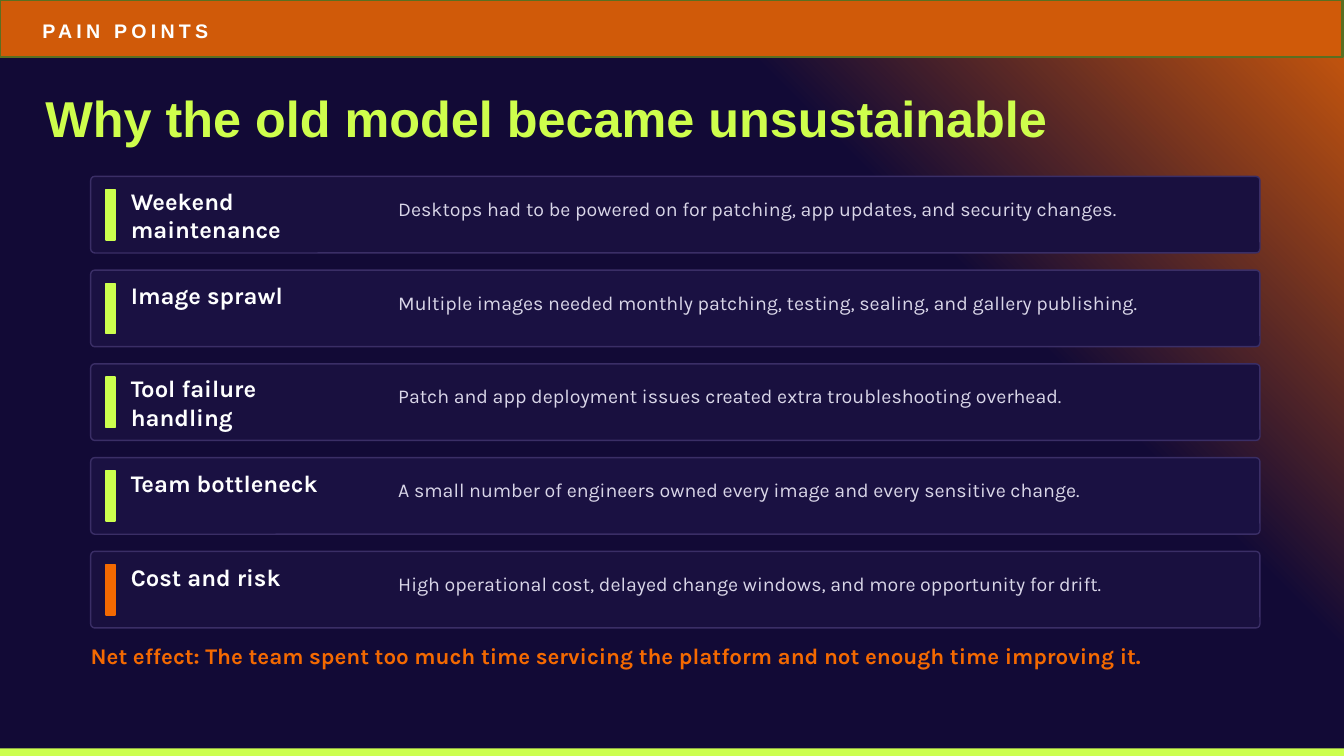
from lxml import etree
from pptx import Presentation
from pptx.dml.color import RGBColor
from pptx.enum import shapes, text
from pptx.oxml import ns
from pptx.util import Pt

COLORS = {
    "glow": "D15A0A", "night": "120A36", "band": "D05A09", "band_line": "5A6F21",
    "lime": "CCFF4E", "title": "CEFE4C", "orange": "F46901", "white": "FEFFFF",
    "body": "D9D6E8", "card": "19103F", "card_alt": "1A1142", "card_line": "3A2E66",
}
SLIDE_WIDTH, SLIDE_HEIGHT = 960, 540
CARD_LEFT, CARD_TOP, CARD_WIDTH, CARD_HEIGHT = 64.8, 126, 835.2, 54.7
CARD_PITCH = 66.96
ONE_LINE_OFFSET, TWO_LINE_OFFSET = 7.9, 17.3

# Label, label offset within the card, explanation, marker colour
PAIN_POINTS = [
    ("Weekend maintenance", TWO_LINE_OFFSET,
     "Desktops had to be powered on for patching, app updates, and security changes.", "lime"),
    ("Image sprawl", ONE_LINE_OFFSET,
     "Multiple images needed monthly patching, testing, sealing, and gallery publishing.", "lime"),
    ("Tool failure handling", TWO_LINE_OFFSET,
     "Patch and app deployment issues created extra troubleshooting overhead.", "lime"),
    ("Team bottleneck", ONE_LINE_OFFSET,
     "A small number of engineers owned every image and every sensitive change.", "lime"),
    ("Cost and risk", ONE_LINE_OFFSET,
     "High operational cost, delayed change windows, and more opportunity for drift.", "orange"),
]


def rgb(name):
    return RGBColor.from_string(COLORS[name])


def paint_background(slide):
    """Fill the background with a glow spreading from the top right corner."""
    fill = slide.background.fill
    fill.gradient()
    for stop, color, position in zip(fill.gradient_stops, ("glow", "night"), (0, 0.31)):
        stop.color.rgb = rgb(color)
        stop.position = position
    gradient = slide.element.find(".//" + ns.qn("a:gradFill"))
    gradient.remove(gradient.find(ns.qn("a:lin")))
    glow = etree.SubElement(gradient, ns.qn("a:path"), path="circle")
    etree.SubElement(glow, ns.qn("a:fillToRect"), l="100000", b="100000")


def add_block(slide, box, fill, line=None, line_width=1, corner=None):
    kind = shapes.MSO_SHAPE.ROUNDED_RECTANGLE if corner else shapes.MSO_SHAPE.RECTANGLE
    block = slide.shapes.add_shape(kind, *map(Pt, box))
    block.shadow.inherit = False
    block.fill.solid()
    block.fill.fore_color.rgb = rgb(fill)
    if corner:
        block.adjustments[0] = corner
    if line:
        block.line.color.rgb = rgb(line)
        block.line.width = Pt(line_width)
    else:
        block.line.fill.background()


def write(holder, words, size, color, font="Karla", bold=False):
    """Put one left-aligned, vertically centred run into a shape without insets."""
    frame = holder.text_frame
    frame.word_wrap = True
    frame.auto_size = text.MSO_AUTO_SIZE.NONE
    frame.vertical_anchor = text.MSO_ANCHOR.MIDDLE
    frame.margin_left = frame.margin_right = frame.margin_top = frame.margin_bottom = 0
    paragraph = frame.paragraphs[0]
    paragraph.alignment = text.PP_ALIGN.LEFT
    run = paragraph.add_run()
    run.text = words
    run.font.name = font
    run.font.size = Pt(size)
    run.font.bold = bold
    run.font.color.rgb = rgb(color)
    return run


def add_text(slide, box, *args, **kwargs):
    return write(slide.shapes.add_textbox(*map(Pt, box)), *args, **kwargs)


def set_title(slide, box, words):
    title = slide.shapes.title
    title.left, title.top, title.width, title.height = map(Pt, box)
    write(title, words, 36, "title", font="Arial", bold=True)


def add_pain_point(slide, index, label, label_offset, explanation, marker):
    top = CARD_TOP + index * CARD_PITCH
    card_fill = "card_alt" if index % 2 else "card"
    add_block(slide, (CARD_LEFT, top, CARD_WIDTH, CARD_HEIGHT), card_fill, "card_line", corner=0.053)
    add_block(slide, (CARD_LEFT + 10.8, top + 9.4, 6.5, 36), marker, marker)
    add_text(slide, (CARD_LEFT + 28.6, top + label_offset, 154.8, 20.2), label, 17, "white", bold=True)
    add_text(slide, (CARD_LEFT + 219.6, top + 7.9, 572.4, 30.2), explanation, 14, "body")


def main():
    deck = Presentation()
    deck.slide_width, deck.slide_height = Pt(SLIDE_WIDTH), Pt(SLIDE_HEIGHT)
    slide = deck.slides.add_slide(deck.slide_layouts[5])

    paint_background(slide)
    add_block(slide, (0, 534.6, SLIDE_WIDTH, 5.4), "lime")
    add_block(slide, (0, 0, 959, 41), "band", "band_line", line_width=1.5)
    section = add_text(slide, (30.2, 9.4, 831.6, 25.2), "PAIN POINTS", 14, "white", font="Arial", bold=True)
    section.font._element.set("spc", "300")
    set_title(slide, (32.4, 61.2, 777.6, 44.6), "Why the old model became unsustainable")

    for index, pain_point in enumerate(PAIN_POINTS):
        add_pain_point(slide, index, *pain_point)
    add_text(slide, (CARD_LEFT, 462.2, 849.6, 11.5),
             "Net effect: The team spent too much time servicing the platform and not enough time improving it.",
             16, "orange", bold=True)

    deck.save("out.pptx")


if __name__ == "__main__":
    main()
